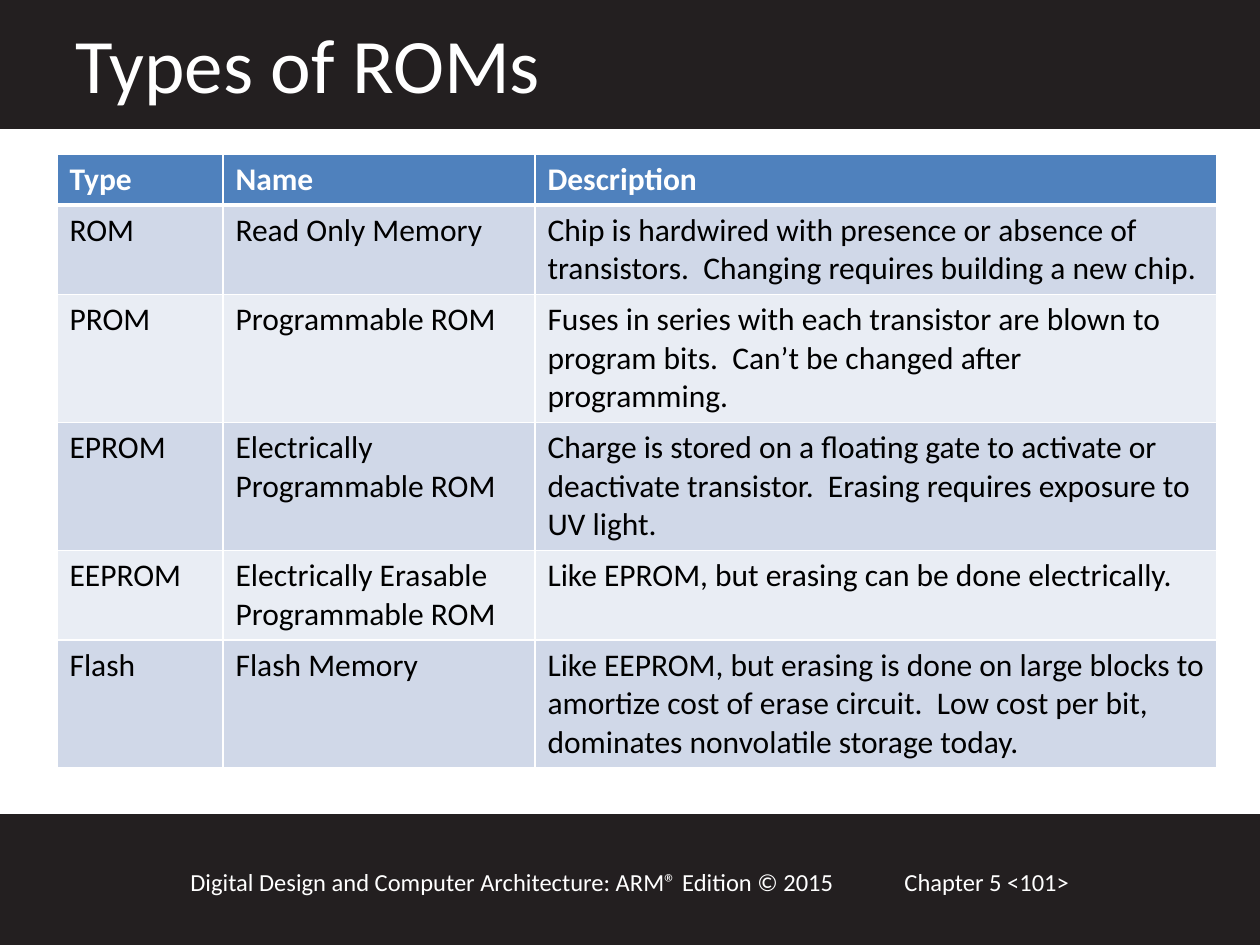
import pptx
import pptx.dml.color
import pptx.enum.shapes
import pptx.enum.text
import pptx.oxml
import pptx.oxml.ns
import pptx.util
from lxml import etree

RGBColor = pptx.dml.color.RGBColor
WHITE = RGBColor(0xFF, 0xFF, 0xFF)
BLACK = RGBColor(0, 0, 0)
CHARCOAL = RGBColor(0x23, 0x1F, 0x20)
HEADER_BLUE = RGBColor(0x4F, 0x81, 0xBD)
BAND_FILLS = (RGBColor(0xD0, 0xD8, 0xE8), RGBColor(0xE9, 0xED, 0xF4))
FONT = "Calibri"

TITLE = ("Types of ROMs", (63, 10, 1092, 106))
BARS = [(0, 816, 1260, 129), (0, 0, 1260, 127)]
FOOTERS = [
    ("Chapter 5 <101>", (892, 861, 268, 42)),
    ("Digital Design and Computer Architecture: ARM® Edition © 2015",
     (178, 861, 725, 42)),
]
ROWS = [
    ("Type", "Name", "Description"),
    ("ROM", "Read Only Memory",
     "Chip is hardwired with presence or absence of transistors.  "
     "Changing requires building a new chip."),
    ("PROM", "Programmable ROM",
     "Fuses in series with each transistor are blown to program bits.  "
     "Can’t be changed after programming."),
    ("EPROM", "Electrically Programmable ROM",
     "Charge is stored on a floating gate to activate or deactivate "
     "transistor.  Erasing requires exposure to UV light."),
    ("EEPROM", "Electrically Erasable Programmable ROM",
     "Like EPROM, but erasing can be done electrically."),
    ("Flash", "Flash Memory",
     "Like EEPROM, but erasing is done on large blocks to amortize cost of "
     "erase circuit.  Low cost per bit, dominates nonvolatile storage today."),
]
TABLE_LEFT, TABLE_TOP = 57, 154
COLUMN_WIDTHS = [166, 312, 682]
ROW_HEIGHTS = [49, 88, 126, 126, 88, 126]


def px(value):
    return round(value * 914400 / 126)


def scaled(box):
    return [px(value) for value in box]


def write(text_frame, text, size=18, color=WHITE, bold=False):
    text_frame.word_wrap = True
    paragraph = text_frame.paragraphs[0]
    paragraph.alignment = pptx.enum.text.PP_ALIGN.LEFT
    run = paragraph.add_run()
    run.text = text
    run.font.name = FONT
    run.font.size = pptx.util.Pt(size)
    run.font.bold = bold
    run.font.color.rgb = color


def add_borders(cell, **widths):
    """Draw white borders; widths are points keyed by side (L, R, T, B)."""
    properties = cell._tc.get_or_add_tcPr()
    for side, width in widths.items():
        line = etree.SubElement(properties, pptx.oxml.ns.qn(f"a:ln{side}"),
                                w=str(pptx.util.Pt(width)))
        fill = etree.SubElement(line, pptx.oxml.ns.qn("a:solidFill"))
        etree.SubElement(fill, pptx.oxml.ns.qn("a:srgbClr"), val=str(WHITE))


def add_bar(slide, box):
    bar = slide.shapes.add_shape(
        pptx.enum.shapes.MSO_SHAPE.RECTANGLE, *scaled(box))
    bar.shadow.inherit = False
    bar.fill.solid()
    bar.fill.fore_color.rgb = CHARCOAL
    bar.line.color.rgb = CHARCOAL
    bar.line.width = pptx.util.Pt(2)


def place_title(slide):
    text, box = TITLE
    title = slide.shapes.title
    title.left, title.top, title.width, title.height = scaled(box)
    title.text_frame.vertical_anchor = pptx.enum.text.MSO_ANCHOR.MIDDLE
    write(title.text_frame, text, size=44)
    # Appending again lifts the title in front of the top bar.
    title.element.getparent().append(title.element)


def add_rom_table(slide):
    box = (TABLE_LEFT, TABLE_TOP, sum(COLUMN_WIDTHS), sum(ROW_HEIGHTS))
    table = slide.shapes.add_table(
        len(ROWS), len(COLUMN_WIDTHS), *scaled(box)).table
    for column, width in zip(table.columns, COLUMN_WIDTHS):
        column.width = px(width)
    for index, (row, height, texts) in enumerate(
            zip(table.rows, ROW_HEIGHTS, ROWS)):
        row.height = px(height)
        header = index == 0
        fill = HEADER_BLUE if header else BAND_FILLS[(index - 1) % 2]
        for cell, text in zip(row.cells, texts):
            add_borders(cell, L=1, R=1, T=3 if index == 1 else 1,
                        B=3 if header else 1)
            cell.fill.solid()
            cell.fill.fore_color.rgb = fill
            write(cell.text_frame, text, bold=header,
                  color=WHITE if header else BLACK)


def main():
    presentation = pptx.Presentation()
    presentation.slide_width, presentation.slide_height = scaled((1260, 945))
    slide = presentation.slides.add_slide(presentation.slide_layouts[5])
    for box in BARS:
        add_bar(slide, box)
    for text, box in FOOTERS:
        footer = slide.shapes.add_textbox(*scaled(box))
        write(footer.text_frame, text, size=14)
    place_title(slide)
    add_rom_table(slide)
    presentation.save("out.pptx")


if __name__ == "__main__":
    main()
